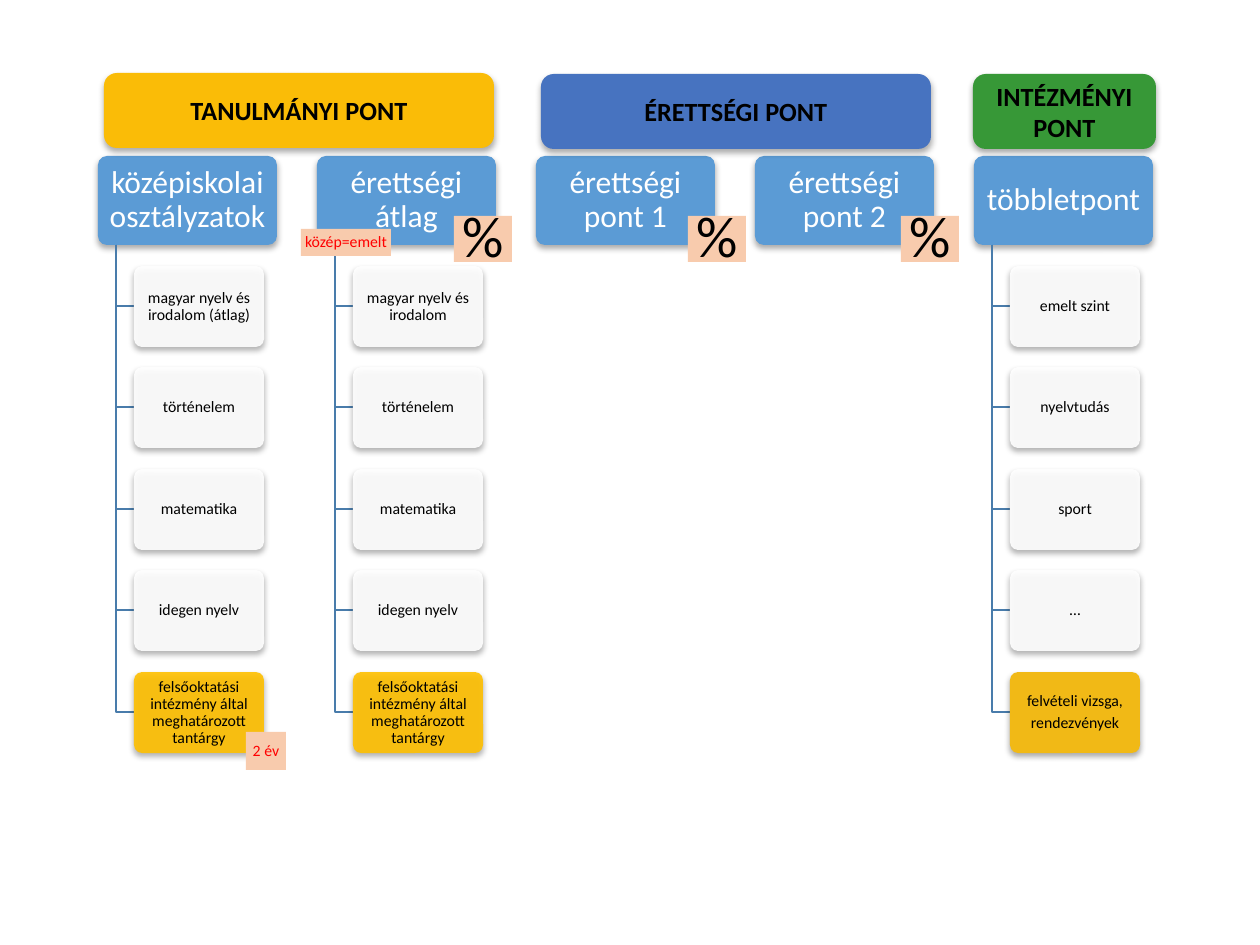
import pptx
import pptx.util
import pptx.dml.color
import pptx.enum.shapes
import pptx.enum.text
import pptx.oxml
import pptx.oxml.ns

PX = 914400 / 126
SHAPES = pptx.enum.shapes.MSO_SHAPE
SHADOW = (
    '<a:outerShdw xmlns:a="http://schemas.openxmlformats.org/drawingml/2006/main" '
    'blurRad="44450" dist="27940" dir="5400000" algn="ctr" rotWithShape="0">'
    '<a:srgbClr val="000000"><a:alpha val="32000"/></a:srgbClr></a:outerShdw>'
)


def px(n):
    return pptx.util.Emu(round(n * PX))


def color(value):
    return pptx.dml.color.RGBColor.from_string(value)


class Diagram:
    font = "Calibri"
    line_color = "497CAB"

    def __init__(self, slide):
        self.slide = slide

    def box(self, kind, x, y, w, h, fill, text, size, ink="000000", bold=False,
            inset=(3, 1), spacing=0.9, alpha=None):
        s = self.slide.shapes.add_shape(kind, px(x), px(y), px(w), px(h))
        s.fill.solid()
        s.fill.fore_color.rgb = color(fill)
        s.line.fill.background()
        s.shadow.inherit = False
        if alpha:
            clr = s._element.spPr.find(".//" + pptx.oxml.ns.qn("a:srgbClr"))
            clr.append(pptx.oxml.parse_xml(
                '<a:alpha xmlns:a="http://schemas.openxmlformats.org/drawingml/2006/main" '
                f'val="{alpha * 1000}"/>'))
        tf = s.text_frame
        tf.word_wrap = True
        tf.vertical_anchor = pptx.enum.text.MSO_ANCHOR.MIDDLE
        tf.margin_left = tf.margin_right = px(inset[0])
        tf.margin_top = tf.margin_bottom = px(inset[1])
        tf.text = text
        for i, p in enumerate(tf.paragraphs):
            p.alignment = pptx.enum.text.PP_ALIGN.CENTER
            p.line_spacing = spacing
            if i:
                p.space_before = pptx.util.Pt(3)
            p.font.name = self.font
            p.font.size = pptx.util.Pt(size)
            p.font.bold = bold
            p.font.color.rgb = color(ink)
        return s

    def card(self, *args, radius=0.1, **style):
        s = self.box(SHAPES.ROUNDED_RECTANGLE, *args, **style)
        s.adjustments[0] = radius
        effects = s._element.spPr.find(pptx.oxml.ns.qn("a:effectLst"))
        effects.append(pptx.oxml.parse_xml(SHADOW))

    def tag(self, *args, **style):
        self.box(SHAPES.RECTANGLE, *args, **style)

    def elbow(self, x, top, right, bottom):
        builder = self.slide.shapes.build_freeform(px(x), px(top))
        builder.add_line_segments(
            [(px(x), px(bottom)), (px(right), px(bottom))], close=False)
        s = builder.convert_to_shape()
        s.fill.background()
        s.line.color.rgb = color(self.line_color)
        s.line.width = pptx.util.Pt(1)
        s.shadow.inherit = False


WHITE, GOLD = ("FFFFFF", 90), ("FFC000", 90)
OWN_SUBJECT = "felsőoktatási intézmény által meghatározott tantárgy"

# Column heading, its items, and the fill and opacity of the last item
COLUMNS = [
    ("középiskolai osztályzatok",
     ["magyar nyelv és irodalom (átlag)", "történelem", "matematika",
      "idegen nyelv", OWN_SUBJECT], GOLD),
    ("érettségi átlag",
     ["magyar nyelv és irodalom", "történelem", "matematika",
      "idegen nyelv", OWN_SUBJECT], GOLD),
    ("érettségi pont 1", [], None),
    ("érettségi pont 2", [], None),
    ("többletpont",
     ["emelt szint", "nyelvtudás", "sport", "…",
      "felvételi vizsga,\nrendezvények"], ("F1B916", None)),
]
GROUPS = [
    (104, 73, 390, "FABC07", "TANULMÁNYI PONT"),
    (541, 74, 390, "4773C0", "ÉRETTSÉGI PONT"),
    (973, 74, 183, "379837", "INTÉZMÉNYI PONT"),
]
TAGS = [
    (454, 216, 58, 46, "%", 33, "000000"),
    (901, 216, 58, 46, "%", 33, "000000"),
    (688, 216, 58, 46, "%", 33, "000000"),
    (301, 229, 90, 27, "közép=emelt", 9, "FF0000"),
    (246, 732, 40, 38, "2 év", 9, "FF0000"),
]
HEAD_Y, HEAD_W, HEAD_H = 156, 179, 89
ITEM_W, ITEM_H = 130, 81


def main():
    prs = pptx.Presentation()
    prs.slide_width, prs.slide_height = px(1260), px(945)
    d = Diagram(prs.slides.add_slide(prs.slide_layouts[6]))

    # Hierarchy columns
    for col, (heading, items, last_style) in enumerate(COLUMNS):
        x = 98 + 219 * col
        d.card(x, HEAD_Y, HEAD_W, HEAD_H, "5B9BD5", heading, 18,
               ink="FFFFFF", inset=(8, 6))
        for row, item in enumerate(items):
            y = 266 + 203 * row // 2
            fill, alpha = last_style if row == len(items) - 1 else WHITE
            d.elbow(x + 18, HEAD_Y + HEAD_H, x + 36, y + ITEM_H // 2)
            d.card(x + 36, y, ITEM_W, ITEM_H, fill, item, 9,
                   inset=(5, 4), alpha=alpha)

    # Group banners
    for x, y, w, fill, text in GROUPS:
        d.card(x, y, w, 75, fill, text, 15, bold=True, inset=(13, 6),
               spacing=1.0, radius=0.17)

    # Small tags
    for x, y, w, h, text, size, ink in TAGS:
        d.tag(x, y, w, h, "F8CBAD", text, size, ink=ink)

    prs.save("out.pptx")


if __name__ == "__main__":
    main()
